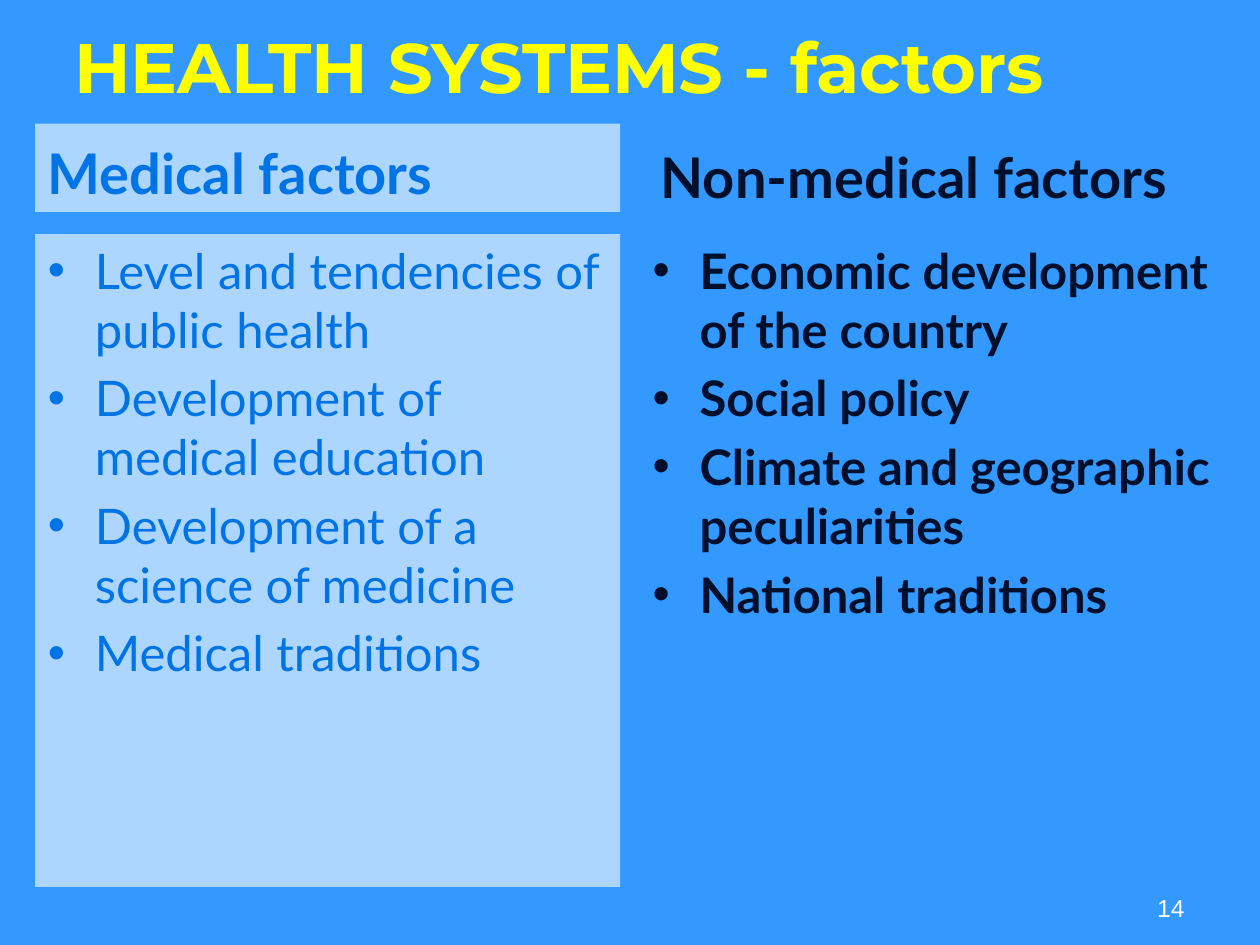
from lxml.etree import SubElement
from pptx import Presentation
from pptx.dml.color import RGBColor
from pptx.enum.text import MSO_ANCHOR, MSO_AUTO_SIZE, PP_ALIGN
from pptx.oxml.ns import qn
from pptx.util import Cm, Pt


def paint(target, color):
    """Give a font or fill format a solid hex colour."""
    target.rgb = RGBColor.from_string(color)


def place(shape, box):
    """Move a shape to a box of left, top, width and height in cm."""
    shape.left, shape.top, shape.width, shape.height = map(Cm, box)


def veil(shape, color, alpha):
    """Fill a shape with a see-through colour of the given percent."""
    shape.fill.solid()
    paint(shape.fill.fore_color, color)
    tint = shape.fill._xPr.find(f"{qn('a:solidFill')}/{qn('a:srgbClr')}")
    SubElement(tint, qn("a:alpha"), val=str(alpha * 1000))


def write(shape, lines, face, size, color, bold=False, align=PP_ALIGN.LEFT,
          anchor=MSO_ANCHOR.TOP, bullet=False):
    """Fill a shape with one formatted paragraph for each line."""
    frame = shape.text_frame
    frame.word_wrap = True
    frame.auto_size = MSO_AUTO_SIZE.NONE
    frame.vertical_anchor = anchor
    for i, line in enumerate(lines):
        para = frame.add_paragraph() if i else frame.paragraphs[0]
        if bullet:
            props = para._p.get_or_add_pPr()
            props.set("marL", str(Cm(0.95)))
            props.set("indent", str(Cm(-0.95)))
            SubElement(props, qn("a:buFont"), typeface="Arial")
            SubElement(props, qn("a:buChar"), char="•")
        para.alignment = align
        para.space_before = Pt(size * 0.2 if i else 0)
        run = para.add_run()
        run.text = line
        run.font.name, run.font.size, run.font.bold = face, Pt(size), bold
        paint(run.font.color, color)


def title(slide, box, text):
    """Place the slide title."""
    place(slide.shapes.title, box)
    write(slide.shapes.title, [text], "Montserrat", 40, "FFFF00", True,
          anchor=MSO_ANCHOR.MIDDLE)


def column(head, body, box, name, items, color, bold=False, shift=(0, 0, 0),
           align=PP_ALIGN.LEFT, shade=False):
    """Place a heading, moved by a shift, above its bulleted list."""
    left, top, width, height = box
    right, down, extra = shift
    place(head, (left + right, top + down, width + extra, 1.78))
    place(body, (left, top + 2.23, width, height - 2.23))
    write(head, [name], "Lato", 32, color, True, align, MSO_ANCHOR.BOTTOM)
    write(body, items, "Lato", 28, color, bold, bullet=True)
    if shade:
        for part in (head, body):
            veil(part, "FFFFFF", 60)


def number(slide, box, text):
    """Place the page number."""
    note = slide.shapes.add_textbox(*map(Cm, box))
    write(note, [text], "Arial", 14, "FFFFFF", align=PP_ALIGN.RIGHT)


def main():
    """Build and save the slide."""
    deck = Presentation()
    deck.slide_width, deck.slide_height = Cm(25.4), Cm(19.05)
    slide = deck.slides.add_slide(deck.slide_layouts[4])
    slide.background.fill.solid()
    paint(slide.background.fill.fore_color, "3399FF")
    spots = slide.placeholders
    title(slide, (1.24, 0, 22.86, 2.64), "HEALTH SYSTEMS - factors")
    column(spots[1], spots[2], (0.71, 2.49, 11.79, 15.39), "Medical factors",
           ["Level and tendencies of public health",
            "Development of medical education",
            "Development of a science of medicine",
            "Medical traditions"], "0073E5", shade=True)
    column(spots[3], spots[4], (12.9, 2.49, 11.99, 15.39),
           "Non-medical factors",
           ["Economic development of the country", "Social policy",
            "Climate and geographic peculiarities", "National traditions"],
           "000F2B", True, (-0.56, 0.08, 0.18), PP_ALIGN.CENTER)
    number(slide, (18.21, 17.88, 5.92, 1.32), "14")
    deck.save("out.pptx")


if __name__ == "__main__":
    main()
